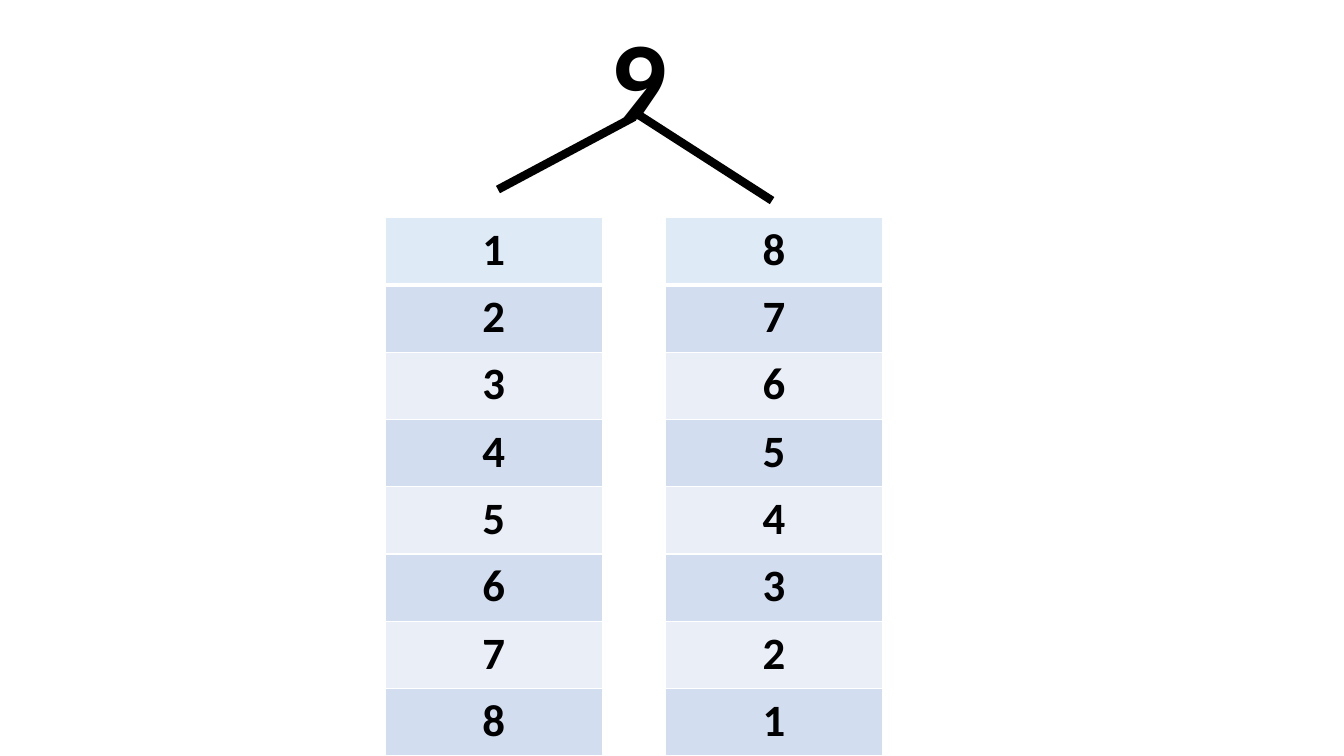
from lxml import etree
from pptx import Presentation
from pptx import util as u
from pptx.dml.color import RGBColor
from pptx.enum import shapes, text
from pptx.oxml.ns import qn

COLORS = {
    "ink": "000000",
    "border": "FFFFFF",
    "first": "DEEBF7",
    "dark": "D2DEEF",
    "light": "EAEFF7",
}


class NumberBondSlide:
    font_name = "Calibri"

    def __init__(self, deck):
        self.slide = deck.slides.add_slide(deck.slide_layouts[5])

    def color(self, name):
        return RGBColor.from_string(COLORS[name])

    def style(self, paragraph, size):
        paragraph.alignment = text.PP_ALIGN.CENTER
        font = paragraph.font
        font.name = self.font_name
        font.size = u.Pt(size)
        font.bold = True
        font.color.rgb = self.color("ink")

    def whole(self, number, left, top, width, height):
        title = self.slide.shapes.title
        title.left, title.top = u.Pt(left), u.Pt(top)
        title.width, title.height = u.Pt(width), u.Pt(height)
        frame = title.text_frame
        frame.text = str(number)
        frame.auto_size = text.MSO_AUTO_SIZE.NONE
        frame.vertical_anchor = text.MSO_ANCHOR.TOP
        self.style(frame.paragraphs[0], 80)

    def branch(self, start, end):
        points = [u.Pt(value) for value in (*start, *end)]
        branch = self.slide.shapes.add_connector(shapes.MSO_CONNECTOR.STRAIGHT, *points)
        branch.line.color.rgb = self.color("ink")
        branch.line.width = u.Pt(6)
        etree.SubElement(branch._element.spPr, qn("a:effectLst"))

    def border(self, cell, side, width):
        properties = cell._tc.get_or_add_tcPr()
        line = etree.SubElement(properties, qn(f"a:{side}"), w=str(u.Pt(width)))
        fill = etree.SubElement(line, qn("a:solidFill"))
        etree.SubElement(fill, qn("a:srgbClr"), val=COLORS["border"])

    def addends(self, numbers, left, top, width, row_height):
        height = row_height * len(numbers)
        table = self.slide.shapes.add_table(
            len(numbers), 1, u.Pt(left), u.Pt(top), u.Pt(width), u.Pt(height)
        ).table
        table.first_row = table.horz_banding = False
        for index, number in enumerate(numbers):
            table.rows[index].height = u.Pt(row_height)
            cell = table.cell(index, 0)
            cell.text = str(number)
            self.style(cell.text_frame.paragraphs[0], 32)
            self.border(cell, "lnL", 1)
            self.border(cell, "lnR", 1)
            self.border(cell, "lnT", 3 if index == 1 else 1)
            self.border(cell, "lnB", 3 if index == 0 else 1)
            band = "first" if index == 0 else ("light", "dark")[index % 2]
            cell.fill.solid()
            cell.fill.fore_color.rgb = self.color(band)


def main():
    deck = Presentation()
    deck.slide_width, deck.slide_height = u.Pt(960), u.Pt(540)

    whole = 9
    first_addends = range(1, whole)
    second_addends = [whole - addend for addend in first_addends]

    bond = NumberBondSlide(deck)
    bond.whole(whole, left=396, top=2.2, width=121, height=104.4)
    bond.branch((453, 83.5), (355.7, 135.4))
    bond.branch((453, 80), (551.5, 143.3))
    for numbers, left in ((second_addends, 475.2), (first_addends, 275)):
        bond.addends(numbers, left, top=155.5, width=155.5, row_height=48.06)

    deck.save("out.pptx")


if __name__ == "__main__":
    main()
